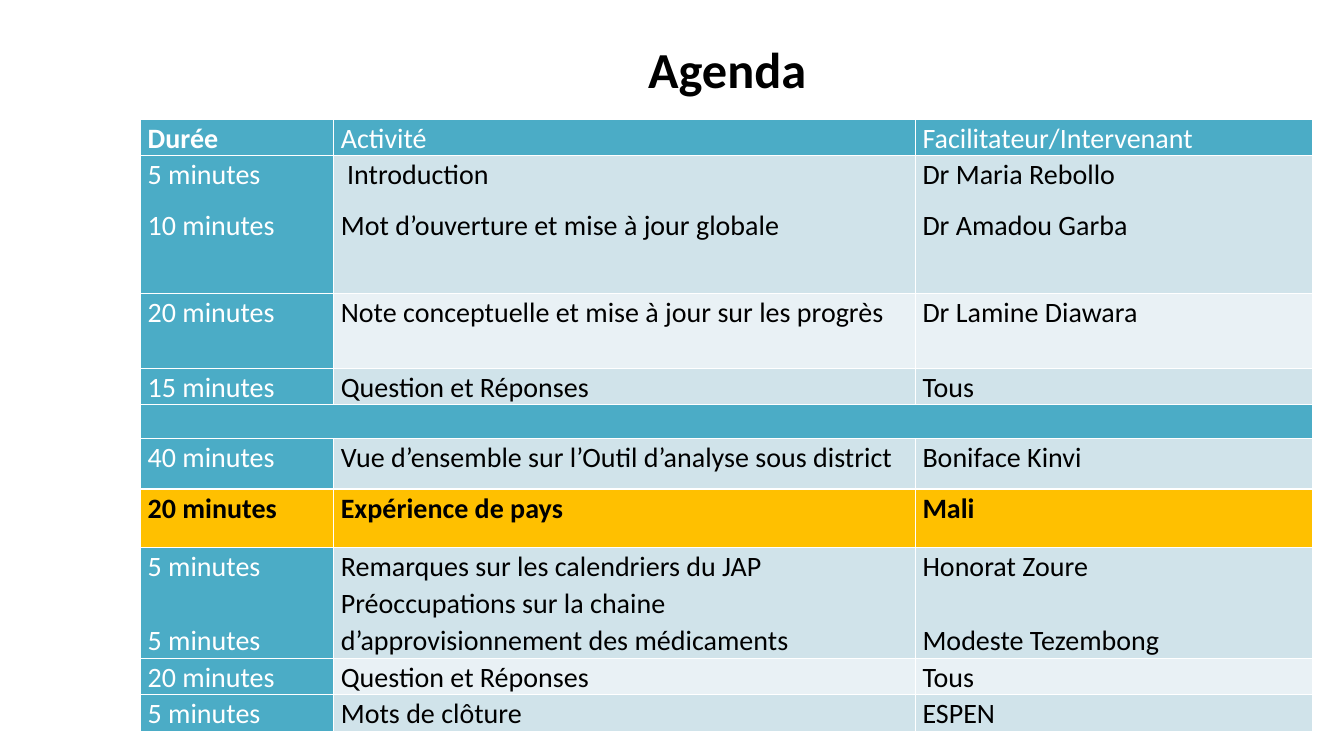
from lxml import etree
from pptx import Presentation
from pptx import util as u
from pptx.dml.color import RGBColor
from pptx.enum import text
from pptx.oxml.ns import qn

COLORS = {"teal": "4BACC6", "pale": "D0E3EA", "light": "E9F1F5",
          "gold": "FFC000", "white": "FFFFFF", "black": "000000"}

COLUMN_WIDTHS = [138, 415.5, 284]
LINE_HEIGHT = 26

# Height, fill of the activity cells, then the cells; a cell lists its paragraphs
HEADER = (LINE_HEIGHT, "teal", [["Durée"], ["Activité"], ["Facilitateur/Intervenant"]])
AGENDA = [
    (98.5, "pale", [["5 minutes", "10 minutes"],
                    [" Introduction", "Mot d’ouverture et mise à jour globale"],
                    ["Dr Maria Rebollo", "Dr Amadou Garba"]]),
    (53.5, "light", [["20 minutes"], ["Note conceptuelle et mise à jour sur les progrès"],
                     ["Dr Lamine Diawara"]]),
    (LINE_HEIGHT, "pale", [["15 minutes"], ["Question et Réponses"], ["Tous"]]),
    (24.4, "teal", []),
    (36, "pale", [["40 minutes"], ["Vue d’ensemble sur l’Outil d’analyse sous district"],
                  ["Boniface Kinvi"]]),
    (42, "gold", [["20 minutes"], ["Expérience de pays"], ["Mali"]]),
    (79, "pale", [["5 minutes", "5 minutes"],
                  ["Remarques sur les calendriers du JAP \v"
                   "Préoccupations sur la chaine d’approvisionnement des médicaments"],
                  ["Honorat Zoure", "Modeste Tezembong"]]),
    (LINE_HEIGHT, "light", [["20 minutes"], ["Question et Réponses"], ["Tous"]]),
    (LINE_HEIGHT, "pale", [["5 minutes"], ["Mots de clôture"], ["ESPEN"]]),
]
REMARKS_ROW = 7


class AgendaSlide:
    font = "Calibri"
    text_size = 20
    title_size = 36

    def __init__(self, presentation):
        self.slide = presentation.slides.add_slide(presentation.slide_layouts[6])

    def format_runs(self, paragraph, size, color, bold):
        for run in paragraph.runs:
            run.font.name = self.font
            run.font.size = u.Pt(size)
            run.font.bold = bold
            run.font.color.rgb = RGBColor.from_string(COLORS[color])

    def title(self, wording, left, top, width, height):
        text_frame = self.slide.shapes.add_textbox(*map(u.Pt, (left, top, width, height))).text_frame
        text_frame.word_wrap = True
        text_frame.vertical_anchor = text.MSO_ANCHOR.MIDDLE
        text_frame.text = wording
        paragraph = text_frame.paragraphs[0]
        paragraph.alignment = text.PP_ALIGN.CENTER
        self.format_runs(paragraph, self.title_size, "black", True)

    def table(self, rows, widths, left, top):
        heights = [height for height, _, _ in rows]
        table = self.slide.shapes.add_table(
            len(rows), len(widths), u.Pt(left), u.Pt(top),
            u.Pt(sum(widths)), u.Pt(sum(heights))).table
        for column, width in zip(table.columns, widths):
            column.width = u.Pt(width)
        for row, height in zip(table.rows, heights):
            row.height = u.Pt(height)
        return table

    def cell(self, cell, fill):
        cell.margin_left = cell.margin_right = u.Pt(5)
        cell.margin_top = cell.margin_bottom = 0
        for side in ("a:lnL", "a:lnR", "a:lnT", "a:lnB"):
            line = etree.SubElement(cell._tc.get_or_add_tcPr(), qn(side), w=str(u.Pt(1)))
            solid = etree.SubElement(line, qn("a:solidFill"))
            etree.SubElement(solid, qn("a:srgbClr"), val=COLORS["white"])
        cell.fill.solid()
        cell.fill.fore_color.rgb = RGBColor.from_string(COLORS[fill])

    def cell_text(self, cell, paragraphs, color, bold, before, after):
        cell.text_frame.text = "\n".join(paragraphs)
        for index, paragraph in enumerate(cell.text_frame.paragraphs):
            paragraph.line_spacing = 1.07
            paragraph.space_before = u.Pt(before if index else 0)
            paragraph.space_after = u.Pt(after)
            self.format_runs(paragraph, self.text_size, color, bold)


def main():
    presentation = Presentation()
    presentation.slide_width, presentation.slide_height = u.Pt(960), u.Pt(540)
    agenda = AgendaSlide(presentation)

    # Title
    agenda.title("Agenda ", 109.5, 25, 828, 47)

    # Agenda table
    rows = [HEADER] + AGENDA
    table = agenda.table(rows, COLUMN_WIDTHS, 100.5, 85)
    for row, (_, fill, contents) in enumerate(rows):
        highlighted = fill == "gold"
        for column in range(len(COLUMN_WIDTHS)):
            duration = column == 0 and not highlighted
            agenda.cell(table.cell(row, column), "teal" if duration else fill)
        for column, paragraphs in enumerate(contents):
            on_teal = row == 0 or (column == 0 and not highlighted)
            remarks = row == REMARKS_ROW
            agenda.cell_text(table.cell(row, column), paragraphs,
                             color="white" if on_teal else "black",
                             bold=highlighted or row == column == 0,
                             before=LINE_HEIGHT if remarks else 0,
                             after=0 if remarks else 10)
        # Separator row across all columns
        if not contents:
            table.cell(row, 0).merge(table.cell(row, len(COLUMN_WIDTHS) - 1))

    presentation.save("out.pptx")


if __name__ == "__main__":
    main()
